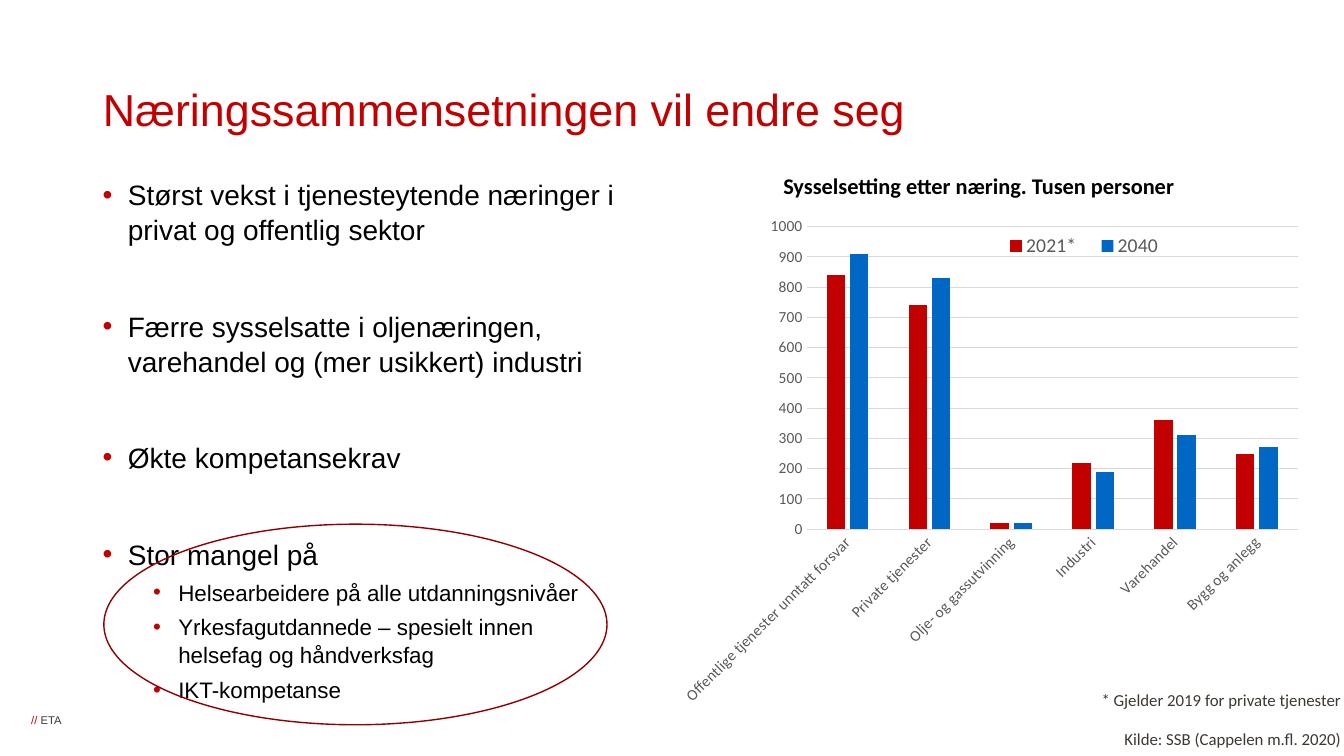
from dataclasses import dataclass

from lxml import etree
from pptx import Presentation
from pptx.chart.data import CategoryChartData
from pptx.dml.color import RGBColor
from pptx.enum import chart as charts, shapes, text
from pptx.oxml import parse_xml
from pptx.oxml.ns import nsdecls, qn
from pptx.util import Pt

PX = 9144  # 100 px to the inch
RED, BLUE, BLACK = "C30000", "0067C5", "000000"
DARK, GREY, PALE, WINE = "3E3832", "595959", "D9D9D9", "900000"


@dataclass
class Box:
    x: int
    y: int
    w: int
    h: int

    def emu(self) -> tuple[int, ...]:
        return tuple(v * PX for v in (self.x, self.y, self.w, self.h))


@dataclass
class Point:
    words: str
    gap: int = 44
    level: int = 0


@dataclass
class Series:
    name: str
    values: list[int]
    color: str


POINTS = [
    Point("Størst vekst i tjenesteytende næringer i privat og offentlig sektor", 0),
    Point("Færre sysselsatte i oljenæringen, varehandel og (mer usikkert) industri"),
    Point("Økte kompetansekrav"),
    Point("Stor mangel på"),
    Point("Helsearbeidere på alle utdanningsnivåer", 5, 1),
    Point("Yrkesfagutdannede – spesielt innen helsefag og håndverksfag", 5, 1),
    Point("IKT-kompetanse", 5, 1),
]
TRADES = ["Offentlige tjenester unntatt forsvar", "Private tjenester",
          "Olje- og gassutvinning", "Industri", "Varehandel", "Bygg og anlegg"]
SERIES = [
    Series("2021*", [840, 740, 20, 220, 360, 250], RED),
    Series("2040", [910, 830, 20, 190, 310, 270], BLUE),
]


def rgb(color: str) -> RGBColor:
    return RGBColor.from_string(color)


def style(font, size: int, color: str, name: str = "Arial", bold: bool = False) -> None:
    font.size, font.name, font.bold = Pt(size), name, bold
    font.color.rgb = rgb(color)


def add_text(slide, box: Box, lines: list[str]):
    frame = slide.shapes.add_textbox(*box.emu()).text_frame
    frame.word_wrap = True
    frame.text = "\n".join(lines)
    return frame


def bullet(par, level: int) -> None:
    props = par._p.get_or_add_pPr()
    props.set("marL", str((25 + 50 * level) * PX))
    props.set("indent", str(-25 * PX))
    color = etree.SubElement(props, qn("a:buClr"))
    etree.SubElement(color, qn("a:srgbClr"), val=RED)
    etree.SubElement(props, qn("a:buFont"), typeface="Arial")
    etree.SubElement(props, qn("a:buChar"), char="•")


def add_title(slide) -> None:
    title = slide.shapes.title
    title.left, title.top, title.width, title.height = Box(92, 53, 935, 117).emu()
    frame = title.text_frame
    frame.text = "Næringssammensetningen vil endre seg"
    frame.vertical_anchor = text.MSO_ANCHOR.MIDDLE
    par = frame.paragraphs[0]
    par.alignment, par.line_spacing = text.PP_ALIGN.LEFT, 0.9
    style(par.runs[0].font, 32, RED)


def add_points(slide) -> None:
    frame = add_text(slide, Box(92, 170, 529, 549), [p.words for p in POINTS])
    for par, point in zip(frame.paragraphs, POINTS):
        par.level, par.line_spacing = point.level, 1.04
        par.space_before = Pt(point.gap)
        bullet(par, point.level)
        style(par.runs[0].font, 20 - 4 * point.level, BLACK)


def add_footer(slide) -> None:
    frame = add_text(slide, Box(27, 708, 60, 13), ["// "])
    frame.margin_left = frame.margin_right = 0
    frame.margin_top = frame.margin_bottom = 0
    par = frame.paragraphs[0]
    par._p.get_or_add_pPr().set("marL", str(4 * PX))
    par.add_run().text = "ETA"
    for run, color in zip(par.runs, (RED, DARK)):
        style(run.font, 8, color)


def add_notes(slide) -> None:
    head = add_text(slide, Box(767, 166, 475, 37),
                    ["Sysselsetting etter næring. Tusen personer"])
    style(head.paragraphs[0].runs[0].font, 16, BLACK, "Calibri", True)
    frame = add_text(slide, Box(1020, 679, 320, 71),
                     ["* Gjelder 2019 for private tjenester",
                      "Kilde: SSB (Cappelen m.fl. 2020)"])
    for par in frame.paragraphs:
        par.alignment = text.PP_ALIGN.RIGHT
        style(par.runs[0].font, 12, DARK, "Calibri")
    frame.paragraphs[1].space_before = Pt(14)


def layout(x: float, y: float, w: float, h: float, inner: bool = False):
    """Build a manual chart layout in fractions of the chart's size."""
    target = '<c:layoutTarget val="inner"/>' if inner else ""
    return parse_xml(
        f'<c:layout {nsdecls("c")}><c:manualLayout>{target}'
        '<c:xMode val="edge"/><c:yMode val="edge"/>'
        f'<c:x val="{x}"/><c:y val="{y}"/><c:w val="{w}"/><c:h val="{h}"/>'
        '</c:manualLayout></c:layout>')


def add_bars(slide) -> None:
    data = CategoryChartData(number_format="0")
    data.categories = TRADES
    for row in SERIES:
        data.add_series(row.name, row.values)
    chart = slide.shapes.add_chart(charts.XL_CHART_TYPE.COLUMN_CLUSTERED,
                                   *Box(667, 203, 633, 546).emu(), data).chart
    style(chart.font, 11, BLACK, "Calibri")
    chart.has_title = False

    plot = chart.plots[0]
    plot.gap_width, plot.overlap, plot.vary_by_categories = 219, -27, False
    for bars, row in zip(plot.series, SERIES):
        bars.format.fill.solid()
        bars.format.fill.fore_color.rgb = rgb(row.color)

    cats, vals = chart.category_axis, chart.value_axis
    for axis in (cats, vals):
        axis.major_tick_mark = axis.minor_tick_mark = charts.XL_TICK_MARK.NONE
        style(axis.tick_labels.font, 11, GREY, "Calibri")
    cats._element.find(qn("c:txPr")).find(qn("a:bodyPr")).set("rot", "-2700000")
    vals.minimum_scale, vals.maximum_scale, vals.major_unit = 0, 1000, 100
    vals.format.line.fill.background()
    for line in (cats.format.line, vals.major_gridlines.format.line):
        line.color.rgb, line.width = rgb(PALE), Pt(0.75)

    chart.has_legend = True
    legend = chart.legend
    legend.position = charts.XL_LEGEND_POSITION.BOTTOM
    legend.include_in_layout = False
    style(legend.font, 14, GREY, "Calibri")
    for part, place in (
            (plot._element.getparent(), layout(0.21, 0.04, 0.77, 0.55, True)),
            (legend._element, layout(0.5, 0.05, 0.29, 0.05))):
        for old in part.findall(qn("c:layout")):
            part.remove(old)
        part.insert(1 if part is legend._element else 0, place)


def add_ring(slide) -> None:
    ring = slide.shapes.add_shape(shapes.MSO_SHAPE.OVAL, *Box(103, 520, 499, 199).emu())
    ring.shadow.inherit = False
    ring.fill.background()
    ring.line.color.rgb, ring.line.width = rgb(WINE), Pt(1)


def main() -> None:
    deck = Presentation()
    deck.slide_width, deck.slide_height = 1333 * PX, 750 * PX
    slide = deck.slides.add_slide(deck.slide_layouts[5])
    for draw in (add_footer, add_points, add_title, add_notes, add_bars, add_ring):
        draw(slide)
    deck.save("out.pptx")


if __name__ == "__main__":
    main()
